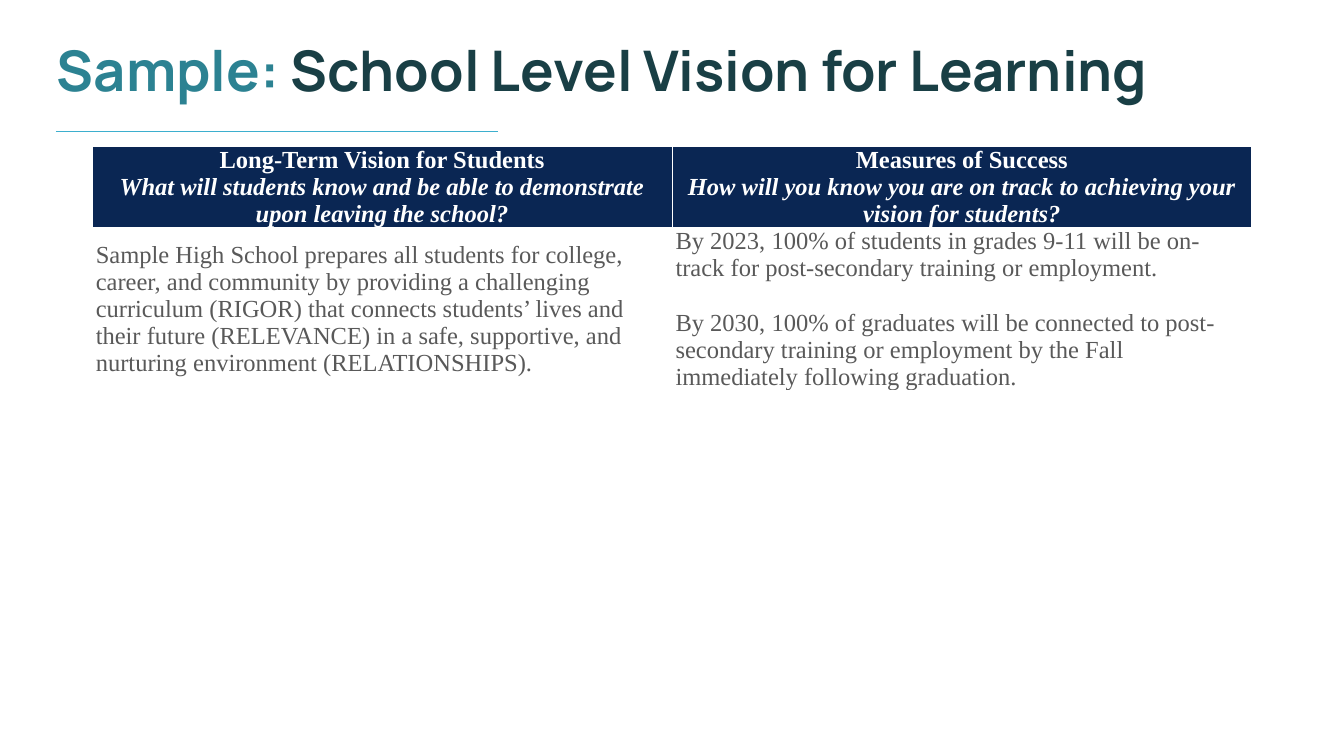
"""Build the slide on a school level vision for learning."""
from lxml import etree
from pptx import Presentation
from pptx import util as u
from pptx.dml.color import RGBColor
from pptx.enum import shapes, text
from pptx.oxml import ns

PX = 9144
TEAL = RGBColor(0x2C, 0x82, 0x92)
DARK = RGBColor(0x19, 0x3F, 0x45)
NAVY = RGBColor(0x0A, 0x26, 0x53)
GRAY = RGBColor(0x59, 0x59, 0x59)
SKY = RGBColor(0x3D, 0xAF, 0xCE)
WHITE = RGBColor(0xFF, 0xFF, 0xFF)

HEADS = [
    ["Long-Term Vision for Students",
     "What will students know and be able to demonstrate upon leaving the school?"],
    ["Measures of Success",
     "How will you know you are on track to achieving your vision for students?"],
]
BODY = [
    ["Sample High School prepares all students for college, career, and community "
     "by providing a challenging curriculum (RIGOR) that connects students’ lives "
     "and their future (RELEVANCE) in a safe, supportive, and nurturing environment "
     "(RELATIONSHIPS)."],
    ["By 2023, 100% of students in grades 9-11 will be on-track for post-secondary "
     "training or employment.",
     "By 2030, 100% of graduates will be connected to post-secondary training or "
     "employment by the Fall immediately following graduation."],
]


def style(font, color, **form):
    font.color.rgb = color
    for key, val in form.items():
        setattr(font, key, val)


def edge(cell, side, width):
    props = cell._tc.get_or_add_tcPr()
    line = etree.SubElement(props, ns.qn(f"a:ln{side}"), w=str(u.Pt(width)))
    fill = etree.SubElement(line, ns.qn("a:solidFill"))
    etree.SubElement(fill, ns.qn("a:srgbClr"), val=str(WHITE))


prs = Presentation()
prs.slide_width, prs.slide_height = 2666 * PX, 1500 * PX
slide = prs.slides.add_slide(prs.slide_layouts[5])

title = slide.shapes.title
box = {"left": 93, "top": 0, "width": 2299, "height": 290}
for key, val in box.items():
    setattr(title, key, val * PX)
frame = title.text_frame
pads = {"margin_left": 20, "margin_top": 10, "margin_right": 20, "margin_bottom": 10}
for key, val in pads.items():
    setattr(frame, key, val * PX)
frame.word_wrap = True
frame.auto_size = text.MSO_AUTO_SIZE.NONE
frame.vertical_anchor = text.MSO_ANCHOR.MIDDLE
para = frame.paragraphs[0]
para.alignment = text.PP_ALIGN.LEFT
para.line_spacing = 0.9
for words, color in [("Sample:", TEAL), (" School Level Vision for Learning", DARK)]:
    run = para.add_run()
    run.text = words
    style(run.font, color, name="Manrope", size=u.Pt(80), bold=True)

table = slide.shapes.add_table(2, 2, 183 * PX, 290 * PX, 2300 * PX, 82 * PX).table
table.horz_banding = False
pads = {"margin_left": 7, "margin_top": 0, "margin_right": 7, "margin_bottom": 0}
for row, cells in enumerate([HEADS, BODY]):
    head = row == 0
    for col, lines in enumerate(cells):
        cell = table.cell(row, col)
        for key, val in pads.items():
            setattr(cell, key, val * PX)
        cell.vertical_anchor = text.MSO_ANCHOR.MIDDLE
        cell.text = "\n".join(lines)
        for num, para in enumerate(cell.text_frame.paragraphs):
            para.alignment = text.PP_ALIGN.CENTER if head else text.PP_ALIGN.LEFT
            if num and not head:
                para.space_before = u.Pt(39)
            style(para.runs[0].font, WHITE if head else GRAY, name="Times New Roman",
                  size=u.Pt(35), bold=head, italic=head and num == 1)
        for side in "LRTB":
            edge(cell, side, 3 if head and side == "B" else 1)
        if head:
            cell.fill.solid()
            cell.fill.fore_color.rgb = NAVY
        else:
            cell.fill.background()

rule = slide.shapes.add_connector(
    shapes.MSO_CONNECTOR.STRAIGHT, 111 * PX, 260 * PX, 988 * PX, 260 * PX)
rule.line.color.rgb = SKY
rule.line.width = u.Pt(1)
etree.SubElement(rule._element.spPr, ns.qn("a:effectLst"))

prs.save("out.pptx")
